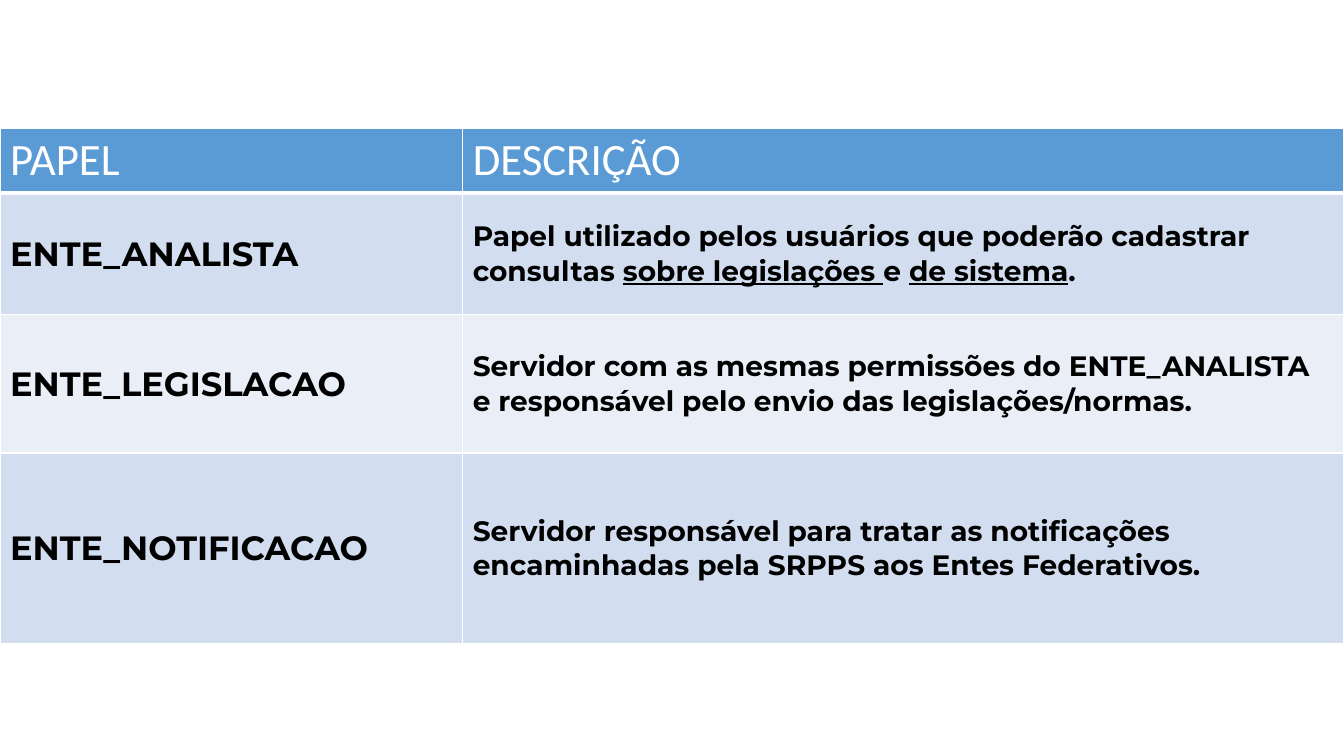
from lxml.etree import SubElement
from pptx import Presentation
from pptx.dml.color import RGBColor
from pptx.enum.text import MSO_ANCHOR
from pptx.oxml.ns import qn
from pptx.util import Pt

WIDTHS = [330.5, 629.5]
HEIGHTS = [35.3, 87.1, 98.6, 136.1]
HEAD = ["PAPEL", "DESCRIÇÃO"]
ROLES = [
    ("ENTE_ANALISTA", [
        ("Papel utilizado pelos usuários que poderão cadastrar consultas ", False),
        ("sobre legislações ", True),
        ("e ", False),
        ("de sistema", True),
        (".", False),
    ]),
    ("ENTE_LEGISLACAO", [
        ("Servidor com as mesmas permissões do ENTE_ANALISTA e responsável "
         "pelo envio das legislações/normas.", False),
    ]),
    ("ENTE_NOTIFICACAO", [
        ("Servidor responsável para tratar as notificações encaminhadas "
         "pela SRPPS aos Entes Federativos.", False),
    ]),
]


def color(code):
    """Turn a hex string into a colour."""
    return RGBColor.from_string(code)


def border(cell, base):
    """Draw white lines round a cell, the bottom one of width base."""
    props = cell._tc.get_or_add_tcPr()
    sides = {"a:lnL": 1, "a:lnR": 1, "a:lnT": 1, "a:lnB": base}
    for side, width in sides.items():
        line = SubElement(props, qn(side), w=str(Pt(width)))
        fill = SubElement(line, qn("a:solidFill"))
        SubElement(fill, qn("a:srgbClr"), val="FFFFFF")


def write(cell, runs, size, face, ink, bold):
    """Add runs of (text, underline) to a cell."""
    para = cell.text_frame.paragraphs[0]
    for text, under in runs:
        run = para.add_run()
        run.text = text
        font = run.font
        font.name, font.size = face, Pt(size)
        font.bold, font.underline = bold, under
        font.color.rgb = color(ink)


def paint(cell, fill, base=1):
    """Set the borders, fill and anchor of a cell."""
    border(cell, base)
    cell.fill.solid()
    cell.fill.fore_color.rgb = color(fill)
    cell.vertical_anchor = MSO_ANCHOR.MIDDLE


def add_grid(slide):
    """Add the empty table with its row and column sizes."""
    frame = slide.shapes.add_table(
        len(HEIGHTS), len(WIDTHS), Pt(0), Pt(91.5),
        Pt(sum(WIDTHS)), Pt(sum(HEIGHTS)))
    table = frame.table
    for col, width in zip(table.columns, WIDTHS):
        col.width = Pt(width)
    for row, height in zip(table.rows, HEIGHTS):
        row.height = Pt(height)
    return table


def main():
    """Build the slide of roles and save it."""
    deck = Presentation()
    deck.slide_width, deck.slide_height = Pt(960), Pt(540)
    slide = deck.slides.add_slide(deck.slide_layouts[6])
    table = add_grid(slide)
    for col, title in enumerate(HEAD):
        cell = table.cell(0, col)
        paint(cell, "5B9BD5", 3)
        write(cell, [(title, False)], 32, "Calibri", "FFFFFF", False)
    for row, (role, runs) in enumerate(ROLES, 1):
        fill = "D2DEEF" if row % 2 else "EAEFF7"
        parts = [([(role, False)], 24), (runs, 20)]
        for col, (text, size) in enumerate(parts):
            cell = table.cell(row, col)
            paint(cell, fill, 1)
            write(cell, text, size, "Montserrat", "000000", True)
    deck.save("out.pptx")


if __name__ == "__main__":
    main()
